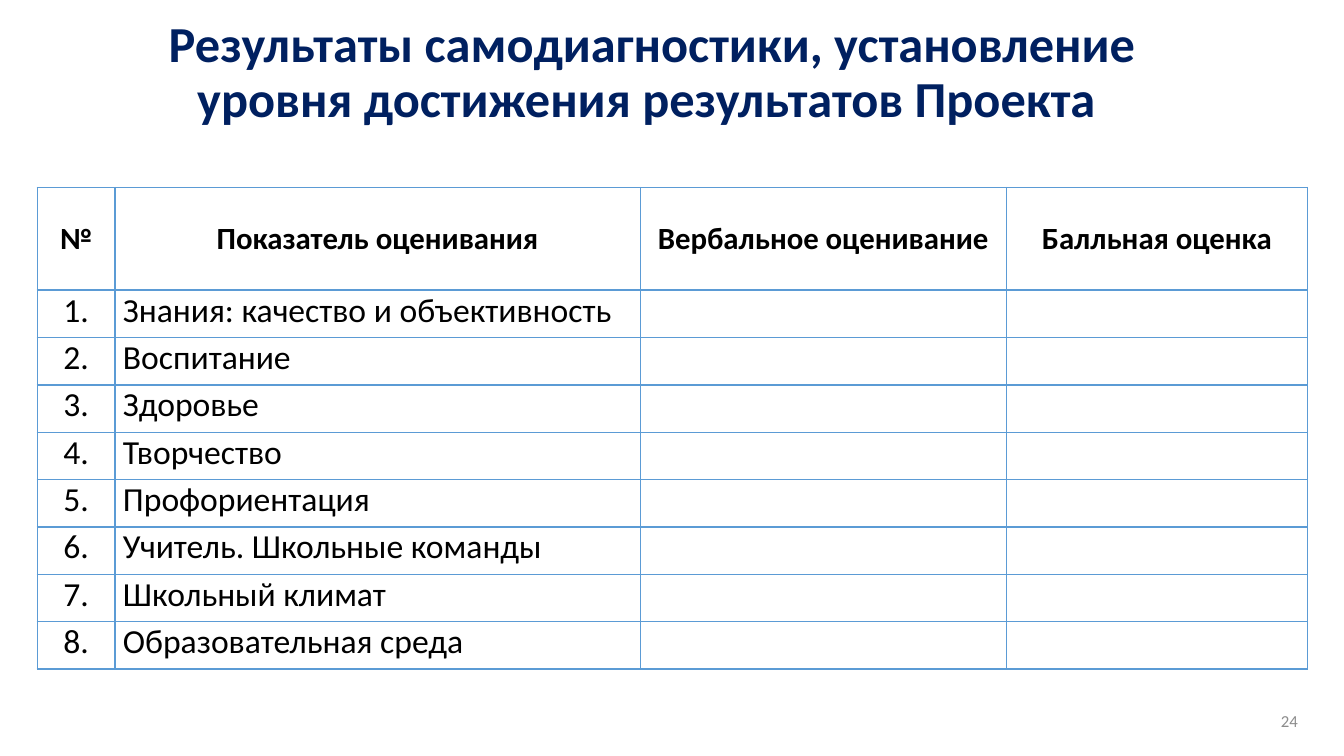
"""Builds the slide with the self-assessment results table."""
from lxml import etree
from pptx import Presentation
from pptx.dml.color import RGBColor
from pptx.enum.text import MSO_ANCHOR, PP_ALIGN
from pptx.oxml.ns import qn
from pptx.util import Inches, Pt

CENTER, LEFT, RIGHT = PP_ALIGN.CENTER, PP_ALIGN.LEFT, PP_ALIGN.RIGHT
TOP, MIDDLE = MSO_ANCHOR.TOP, MSO_ANCHOR.MIDDLE

TITLE = "Результаты самодиагностики, установление уровня достижения результатов Проекта \v"
HEADINGS = ["№", "Показатель оценивания", "Вербальное оценивание", "Балльная оценка"]
INDICATORS = [
    "Знания: качество и объективность",
    "Воспитание",
    "Здоровье",
    "Творчество",
    "Профориентация",
    "Учитель. Школьные команды",
    "Школьный климат",
    "Образовательная среда",
]
PAGE_NUMBER = "24"
NAVY, BLACK, GRAY, BLUE = "002060", "000000", "8C8C8C", "5B9BD5"
COLUMN_WIDTHS = [0.77, 5.21, 3.63, 2.99]
HEADER_HEIGHT, ROW_HEIGHT = 1.02, 0.47


def color(value):
    return RGBColor.from_string(value)


def write(frame, text, size, tint, align, bold=False):
    frame.text = text
    para = frame.paragraphs[0]
    para.alignment = align
    para.font.name = "Calibri"
    para.font.size = Pt(size)
    para.font.bold = bold
    para.font.color.rgb = color(tint)
    return para


def add_borders(cell, widths):
    properties = cell._tc.get_or_add_tcPr()
    for side, width in widths.items():
        line = etree.SubElement(properties, qn(f"a:ln{side}"), w=str(Pt(width)))
        fill = etree.SubElement(line, qn("a:solidFill"))
        etree.SubElement(fill, qn("a:srgbClr"), val=BLUE)


def fill_table(table, rows):
    table.first_row = table.horz_banding = False
    for column, width in zip(table.columns, COLUMN_WIDTHS):
        column.width = Inches(width)
    for i, texts in enumerate(rows):
        header = i == 0
        table.rows[i].height = Inches(HEADER_HEIGHT if header else ROW_HEIGHT)
        for j, text in enumerate(texts):
            cell = table.cell(i, j)
            add_borders(cell, {"L": 1, "R": 1, "T": 2 if i == 1 else 1, "B": 2 if header else 1})
            cell.fill.background()
            cell.margin_left = cell.margin_right = Inches(0.08)
            cell.margin_top = cell.margin_bottom = 0
            cell.vertical_anchor = MIDDLE if header else TOP
            if text:
                align = CENTER if header or j == 0 else LEFT
                write(cell.text_frame, text, 22 if header else 24, BLACK, align, header)


def main():
    deck = Presentation()
    deck.slide_width, deck.slide_height = Inches(13.33), Inches(7.5)
    page = deck.slides.add_slide(deck.slide_layouts[5])

    title = page.shapes.title
    title.left, title.top, title.width, title.height = map(Inches, (0.76, 0.44, 11.42, 1.18))
    write(title.text_frame, TITLE, 36, NAVY, CENTER, True).line_spacing = 0.9
    title.text_frame.vertical_anchor = MIDDLE

    rows = [HEADINGS] + [[f"{n}.", name, "", ""] for n, name in enumerate(INDICATORS, 1)]
    height = HEADER_HEIGHT + ROW_HEIGHT * len(INDICATORS)
    place = map(Inches, (0.37, 1.86, sum(COLUMN_WIDTHS), height))
    fill_table(page.shapes.add_table(len(rows), len(HEADINGS), *place).table, rows)

    number = page.shapes.add_textbox(*map(Inches, (10.45, 6.95, 2.52, 0.4))).text_frame
    number.word_wrap = True
    number.vertical_anchor = MIDDLE
    write(number, PAGE_NUMBER, 12, GRAY, RIGHT)

    deck.save("out.pptx")


if __name__ == "__main__":
    main()
